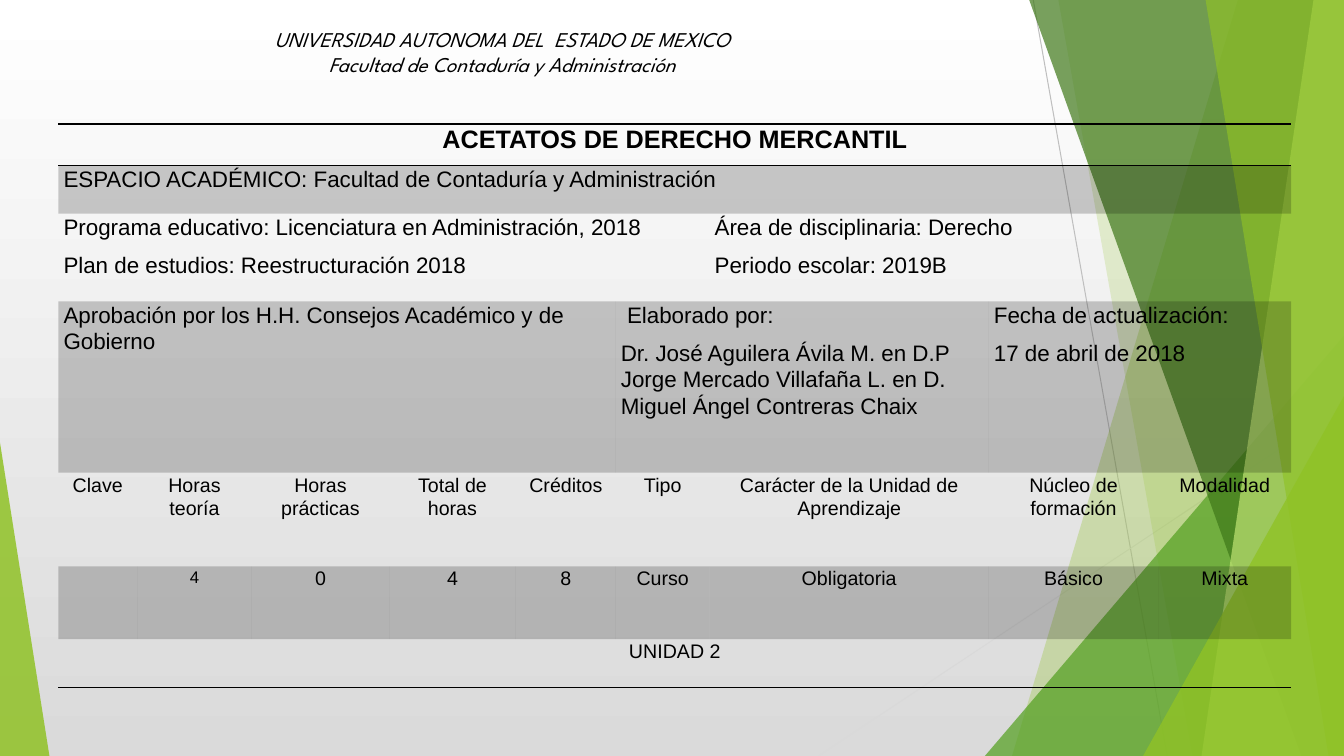
from dataclasses import dataclass

from lxml import etree
from pptx import Presentation
from pptx.dml.color import RGBColor
from pptx.dml.fill import FillFormat
from pptx.enum.shapes import MSO_CONNECTOR, MSO_SHAPE
from pptx.enum.text import MSO_AUTO_SIZE, PP_ALIGN
from pptx.oxml.ns import qn
from pptx.shapes.autoshape import Shape
from pptx.slide import Slide
from pptx.table import _Cell
from pptx.util import Inches, Pt

STRAIGHT = MSO_CONNECTOR.STRAIGHT
TRIANGLE = MSO_SHAPE.ISOSCELES_TRIANGLE
FIT_SHAPE = MSO_AUTO_SIZE.SHAPE_TO_FIT_TEXT
LEFT, CENTER = PP_ALIGN.LEFT, PP_ALIGN.CENTER

BLACK = RGBColor(0x00, 0x00, 0x00)
WHITE = RGBColor(0xFF, 0xFF, 0xFF)
PALE_GRAY = RGBColor(0xDA, 0xDA, 0xDA)
SILVER = RGBColor(0xBF, 0xBF, 0xBF)
LIGHT_SILVER = RGBColor(0xD9, 0xD9, 0xD9)
LIME = RGBColor(0x90, 0xC2, 0x26)
GREEN = RGBColor(0x54, 0xA0, 0x21)
DARK_GREEN = RGBColor(0x3F, 0x78, 0x19)
PALE_LIME = RGBColor(0xC0, 0xE4, 0x74)

BODY_FONT = "Arial"
HEADING_FONT = "League Spartan"
NO_STYLE = "{2D5ABB26-0587-4C30-8999-92F81FD0307C}"
SLIDE_WIDTH, SLIDE_HEIGHT = Inches(13.33), Inches(7.5)
TABLE_LEFT, TABLE_TOP = 4.35, 16.4
COLUMN_SHARES = (5.85, 8.55, 10.2, 9.45, 7.43, 6.98, 20.78, 12.6, 9.9)
ROW_SHARES = (5.47, 6.4, 11.6, 22.67, 12.4, 9.6, 6.4)


@dataclass(frozen=True)
class Ray:
    start: tuple[float, float]
    end: tuple[float, float]
    colour: RGBColor


@dataclass(frozen=True)
class Band:
    top_x: float
    bottom_x: float
    colour: RGBColor
    opacity: int


@dataclass(frozen=True)
class Corner:
    left: float
    top: float
    width: float
    apex: float
    colour: RGBColor
    opacity: int


@dataclass(frozen=True)
class Entry:
    text: str
    span: int = 1
    size: int = 14
    alignment: PP_ALIGN = CENTER
    bold: bool = False


@dataclass(frozen=True)
class Row:
    entries: tuple[Entry, ...]
    shaded: bool = False
    borders: tuple[str, ...] = ()


def detail(text: str, span: int) -> Entry:
    return Entry(text, span, 16, LEFT)


RAYS = (
    Ray((76.88, 0), (86.85, 100), SILVER),
    Ray((100, 53.73), (60.9, 100), LIGHT_SILVER),
)
FACETS = (
    Band(92.1, 75.3, LIME, 30),
    Band(78.75, 88.73, LIME, 20),
    Corner(73.28, 44.4, 26.72, 1, GREEN, 72),
    Band(76.58, 96.83, DARK_GREEN, 70),
    Band(97.73, 89.4, PALE_LIME, 70),
    Band(89.7, 98.85, LIME, 65),
    Corner(85.05, 52.4, 14.95, 1, LIME, 80),
    Corner(0, 58.53, 3.68, 0, LIME, 85),
)
COURSE_HEADINGS = (
    "Clave", "Horas teoría", "Horas prácticas", "Total de horas", "Créditos",
    "Tipo", "Carácter de la Unidad de Aprendizaje", "Núcleo de formación", "Modalidad",
)
COURSE_VALUES = ("0", "4", "8", "Curso", "Obligatoria", "Básico", "Mixta")
ROWS = (
    Row((Entry("ACETATOS DE DERECHO MERCANTIL", 9, 18, bold=True),), borders=("a:lnT", "a:lnB")),
    Row((detail("ESPACIO ACADÉMICO: Facultad de Contaduría y Administración", 9),), shaded=True),
    Row((
        detail("Programa educativo: Licenciatura en Administración, 2018\n"
               "Plan de estudios: Reestructuración 2018", 6),
        detail("Área de disciplinaria: Derecho\nPeriodo escolar: 2019B", 3),
    )),
    Row((
        detail("Aprobación por los H.H. Consejos Académico y de Gobierno", 5),
        detail(" Elaborado por:\nDr. José Aguilera Ávila M. en D.P Jorge Mercado Villafaña "
               "L. en D. Miguel Ángel Contreras Chaix", 2),
        detail("Fecha de actualización:\n17 de abril de 2018", 2),
    ), shaded=True),
    Row(tuple(Entry(heading) for heading in COURSE_HEADINGS)),
    Row((Entry(""), Entry("4", size=12), *(Entry(value) for value in COURSE_VALUES)), shaded=True),
    Row((Entry("UNIDAD 2", 9),), borders=("a:lnB",)),
)


def across(share: float) -> int:
    return round(SLIDE_WIDTH * share / 100)


def down(share: float) -> int:
    return round(SLIDE_HEIGHT * share / 100)


def fill_translucent(fill: FillFormat, element: etree._Element, colour: RGBColor, opacity: int) -> None:
    fill.solid()
    fill.fore_color.rgb = colour
    colour_element = next(element.iter(qn("a:srgbClr")))
    etree.SubElement(colour_element, qn("a:alpha"), val=str(opacity * 1000))


def paint_background(slide: Slide) -> None:
    fill = slide.background.fill
    fill.gradient()
    fill.gradient_angle = 270
    for stop, colour in zip(fill.gradient_stops, (WHITE, PALE_GRAY)):
        stop.color.rgb = colour


def draw_ray(slide: Slide, ray: Ray) -> None:
    (start_x, start_y), (end_x, end_y) = ray.start, ray.end
    connector = slide.shapes.add_connector(
        STRAIGHT, across(start_x), down(start_y), across(end_x), down(end_y))
    connector.line.color.rgb = ray.colour
    connector.line.width = Pt(0.75)
    etree.SubElement(connector._element.spPr, qn("a:effectLst"))


def add_band(slide: Slide, band: Band) -> Shape:
    builder = slide.shapes.build_freeform(across(band.top_x), 0)
    builder.add_line_segments(
        [(SLIDE_WIDTH, 0), (SLIDE_WIDTH, SLIDE_HEIGHT), (across(band.bottom_x), SLIDE_HEIGHT)])
    return builder.convert_to_shape()


def add_corner(slide: Slide, corner: Corner) -> Shape:
    shape = slide.shapes.add_shape(
        TRIANGLE, across(corner.left), down(corner.top),
        across(corner.width), down(100 - corner.top))
    shape.adjustments[0] = corner.apex
    return shape


def draw_facet(slide: Slide, facet: Band | Corner) -> None:
    shape = add_band(slide, facet) if isinstance(facet, Band) else add_corner(slide, facet)
    shape.shadow.inherit = False
    shape.line.fill.background()
    fill_translucent(shape.fill, shape._element.spPr, facet.colour, facet.opacity)


def format_cell(cell: _Cell, row: Row) -> None:
    cell.margin_left = cell.margin_right = Inches(0.05)
    cell.margin_top = cell.margin_bottom = 0
    properties = cell._tc.get_or_add_tcPr()
    for border in row.borders:
        line = etree.SubElement(properties, qn(border), w=str(Pt(1)))
        solid = etree.SubElement(line, qn("a:solidFill"))
        etree.SubElement(solid, qn("a:srgbClr"), val=str(BLACK))
    if row.shaded:
        fill_translucent(cell.fill, properties, BLACK, 20)
    else:
        cell.fill.background()


def write_entry(cell: _Cell, entry: Entry) -> None:
    cell.text = entry.text
    for paragraph in cell.text_frame.paragraphs:
        paragraph.alignment = entry.alignment
        paragraph.line_spacing = 1.07
        paragraph.space_after = Pt(8)
        paragraph.font.name = BODY_FONT
        paragraph.font.size = Pt(entry.size)
        paragraph.font.bold = entry.bold
        paragraph.font.color.rgb = BLACK


def draw_course_table(slide: Slide) -> None:
    frame = slide.shapes.add_table(
        len(ROW_SHARES), len(COLUMN_SHARES), across(TABLE_LEFT), down(TABLE_TOP),
        across(sum(COLUMN_SHARES)), down(sum(ROW_SHARES)))
    table = frame.table
    table.first_row = table.horz_banding = False
    next(frame._element.iter(qn("a:tableStyleId"))).text = NO_STYLE
    for column, share in zip(table.columns, COLUMN_SHARES):
        column.width = across(share)
    for row_index, (row, share) in enumerate(zip(ROWS, ROW_SHARES)):
        table.rows[row_index].height = down(share)
        for cell in table.rows[row_index].cells:
            format_cell(cell, row)
        first = 0
        for entry in row.entries:
            cell = table.cell(row_index, first)
            if entry.span > 1:
                cell.merge(table.cell(row_index, first + entry.span - 1))
            write_entry(cell, entry)
            first += entry.span


def draw_heading(slide: Slide) -> None:
    text_frame = slide.shapes.add_textbox(across(12.38), down(2.8), across(50), down(8.13)).text_frame
    text_frame.word_wrap = True
    text_frame.auto_size = FIT_SHAPE
    paragraph = text_frame.paragraphs[0]
    paragraph.text = "UNIVERSIDAD AUTONOMA DEL  ESTADO DE MEXICO\vFacultad de Contaduría y Administración"
    paragraph.alignment = CENTER
    paragraph.font.name = HEADING_FONT
    paragraph.font.size = Pt(15)
    paragraph.font.italic = True
    paragraph.font.color.rgb = BLACK


def main() -> None:
    presentation = Presentation()
    presentation.slide_width, presentation.slide_height = SLIDE_WIDTH, SLIDE_HEIGHT
    slide = presentation.slides.add_slide(presentation.slide_layouts[6])
    paint_background(slide)
    for ray in RAYS:
        draw_ray(slide, ray)
    for facet in FACETS:
        draw_facet(slide, facet)
    draw_course_table(slide)
    draw_heading(slide)
    presentation.save("out.pptx")


if __name__ == "__main__":
    main()
